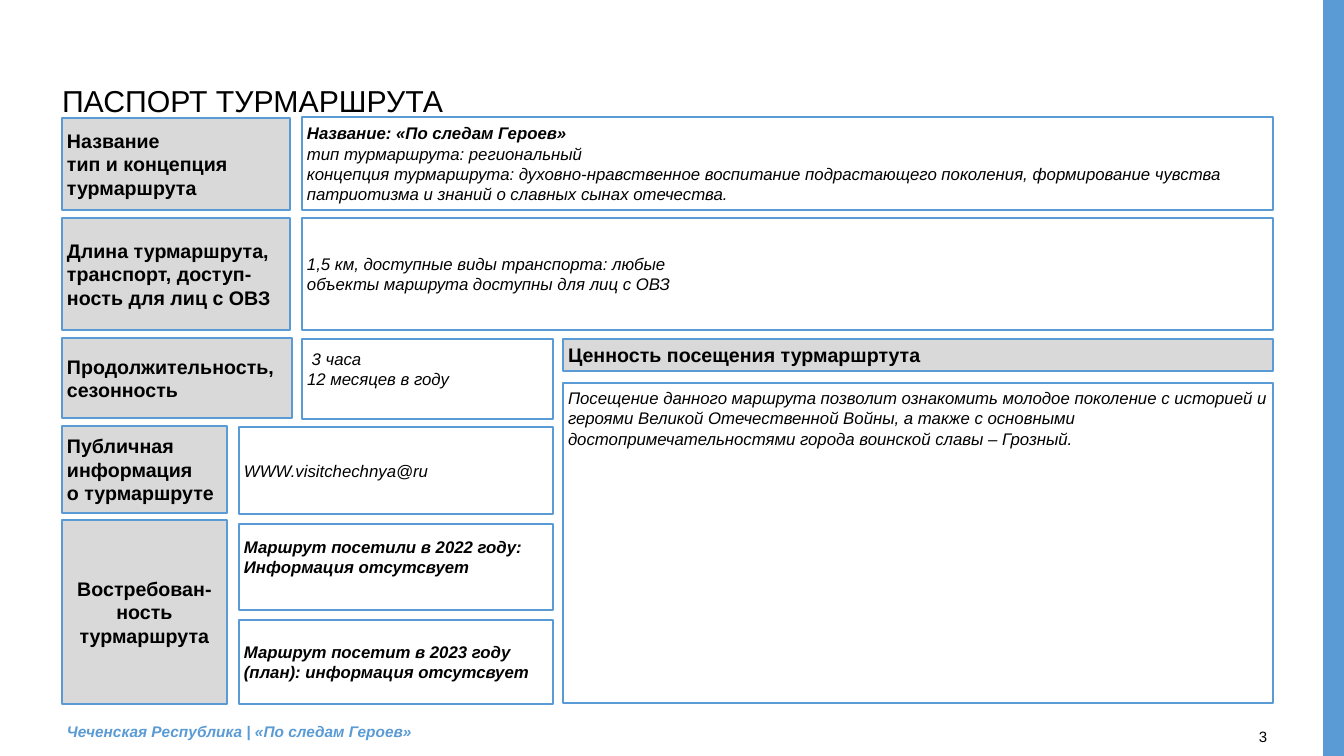
"""Builds the route passport slide."""
from pptx import Presentation
from pptx import util as u
from pptx.dml.color import RGBColor
from pptx.enum import shapes, text

BLUE = RGBColor(0x5B, 0x9B, 0xD5)
GREY = RGBColor(0xD9, 0xD9, 0xD9)
WHITE = RGBColor(0xFF, 0xFF, 0xFF)
BLACK = RGBColor(0, 0, 0)
PX = 914400 / 100.8
WIDE, HIGH = 1344, 756
PAD, LINE = 5, 20
LEFT, MID, COL, HALF, EDGE = 62, 239, 302, 563, 1273
SHORT, LONG, STOP = 227, 290, 553

TITLE = "ПАСПОРТ ТУРМАРШРУТА"
FOOT = "Чеченская Республика | «По следам Героев»"
PAGE = "3"

# Each entry: left, right, top, height, text
HEADS = [
    (LEFT, LONG, 118, 92, "Название \vтип и концепция турмаршрута"),
    (LEFT, LONG, 218, 112, "Длина турмаршрута, \vтранспорт, доступ-ность для лиц с ОВЗ"),
    (LEFT, 292, 338, 80, "Продолжительность, сезонность"),
    (HALF, EDGE, 339, 32, "Ценность посещения турмаршртута"),
    (LEFT, SHORT, 426, 87, "Публичная информация \vо турмаршруте"),
]
DEMAND = (LEFT, SHORT, 520, 184, "Востребован-ность турмаршрута")
NAME = (COL, EDGE, 117, 93, "Название: «По следам Героев»\n"
        "тип турмаршрута: региональный\n"
        "концепция турмаршрута: духовно-нравственное воспитание "
        "подрастающего поколения, формирование чувства патриотизма "
        "и знаний о славных сынах отечества.")
NOTES = [
    (COL, EDGE, 218, 112, "1,5 км, доступные виды транспорта: любые\v"
     "объекты маршрута доступны для лиц с ОВЗ"),
    (MID, STOP, 427, 87, "WWW.visitchechnya@ru"),
]
TIME = (COL, STOP, 339, 80, " 3 часа\n12 месяцев в году")
VALUE = (HALF, EDGE, 383, 320, "Посещение данного маршрута позволит ознакомить "
         "молодое поколение с историей и героями Великой Отечественной Войны, "
         "а также с основными достопримечательностями города воинской славы – Грозный.")
PAST = (MID, STOP, 524, 86, "Маршрут посетили в 2022 году:\nИнформация отсутсвует")
PLAN = (MID, STOP, 620, 84, "Маршрут посетит в 2023 году (план): информация отсутсвует")


def px(n):
    return u.Emu(round(n * PX))


def write(shape, words, size, bold=False, slant=False, color=BLACK,
          pad=PAD, low=0, anchor=text.MSO_ANCHOR.MIDDLE, align=text.PP_ALIGN.LEFT):
    frame = shape.text_frame
    frame.text = words
    frame.word_wrap = True
    frame.vertical_anchor = anchor
    frame.margin_left = frame.margin_right = frame.margin_top = px(pad)
    frame.margin_bottom = px(pad + low)
    for para in frame.paragraphs:
        para.alignment = align
        font = para.font
        for font in [para.font] + [run.font for run in para.runs]:
            font.name, font.size = "Arial", u.Pt(size)
            font.bold, font.italic = bold, slant
            font.color.rgb = color
    return frame


def block(slide, left, top, wide, high, fill, line=None):
    shape = slide.shapes.add_shape(
        shapes.MSO_SHAPE.RECTANGLE, px(left), px(top), px(wide), px(high))
    shape.shadow.inherit = False
    shape.fill.solid()
    shape.fill.fore_color.rgb = fill
    if line is None:
        shape.line.fill.background()
    else:
        shape.line.color.rgb = line
        shape.line.width = u.Pt(1)
    return shape


def cell(slide, item, fill, size, **look):
    left, right, top, high, words = item
    shape = block(slide, left, top, right - left, high, fill, BLUE)
    return write(shape, words, size, **look)


def label(slide, left, top, wide, high, words, size, **look):
    shape = slide.shapes.add_textbox(px(left), px(top), px(wide), px(high))
    return write(shape, words, size, **look)


def main():
    deck = Presentation()
    deck.slide_width, deck.slide_height = px(WIDE), px(HIGH)
    slide = deck.slides.add_slide(deck.slide_layouts[6])

    block(slide, 1323, 0, 21, HIGH, BLUE)
    label(slide, 59, 78, 1197, 44, TITLE, 21.6, pad=3)

    for item in HEADS:
        cell(slide, item, GREY, 14, bold=True)
    cell(slide, DEMAND, GREY, 14, bold=True, align=text.PP_ALIGN.CENTER)

    name = cell(slide, NAME, WHITE, 12, slant=True)
    for run in name.paragraphs[0].runs:
        run.font.bold = True
    for item in NOTES:
        cell(slide, item, WHITE, 12, slant=True)
    cell(slide, TIME, WHITE, 12, slant=True, low=LINE)
    cell(slide, VALUE, WHITE, 12, slant=True, anchor=text.MSO_ANCHOR.TOP)
    cell(slide, PAST, WHITE, 12, bold=True, slant=True, low=LINE)
    cell(slide, PLAN, WHITE, 12, bold=True, slant=True)

    label(slide, LEFT, 717, 801, 29, FOOT, 11, bold=True, slant=True, color=BLUE)
    page = label(slide, 1259, 719, 14, 27, PAGE, 10.7, pad=0,
                 anchor=text.MSO_ANCHOR.TOP)
    page.paragraphs[0].line_spacing = 1.5
    deck.save("out.pptx")


if __name__ == "__main__":
    main()
